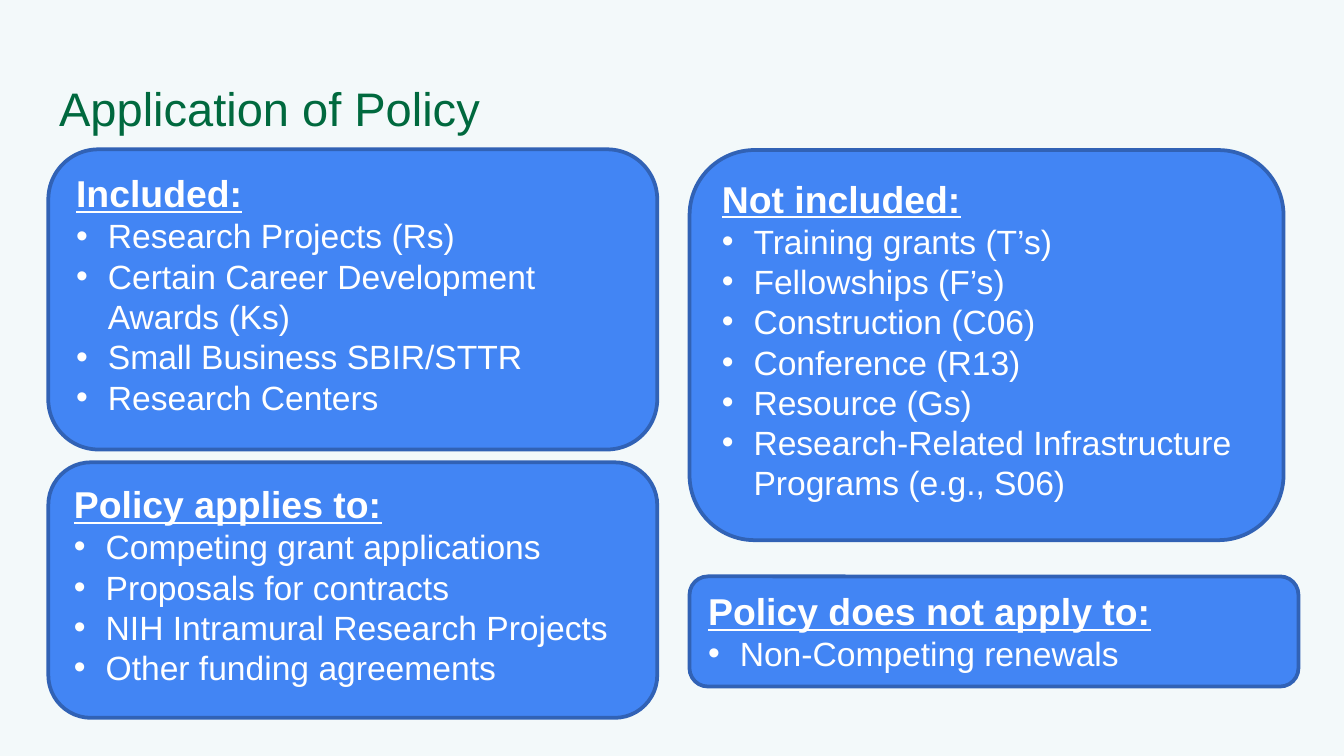
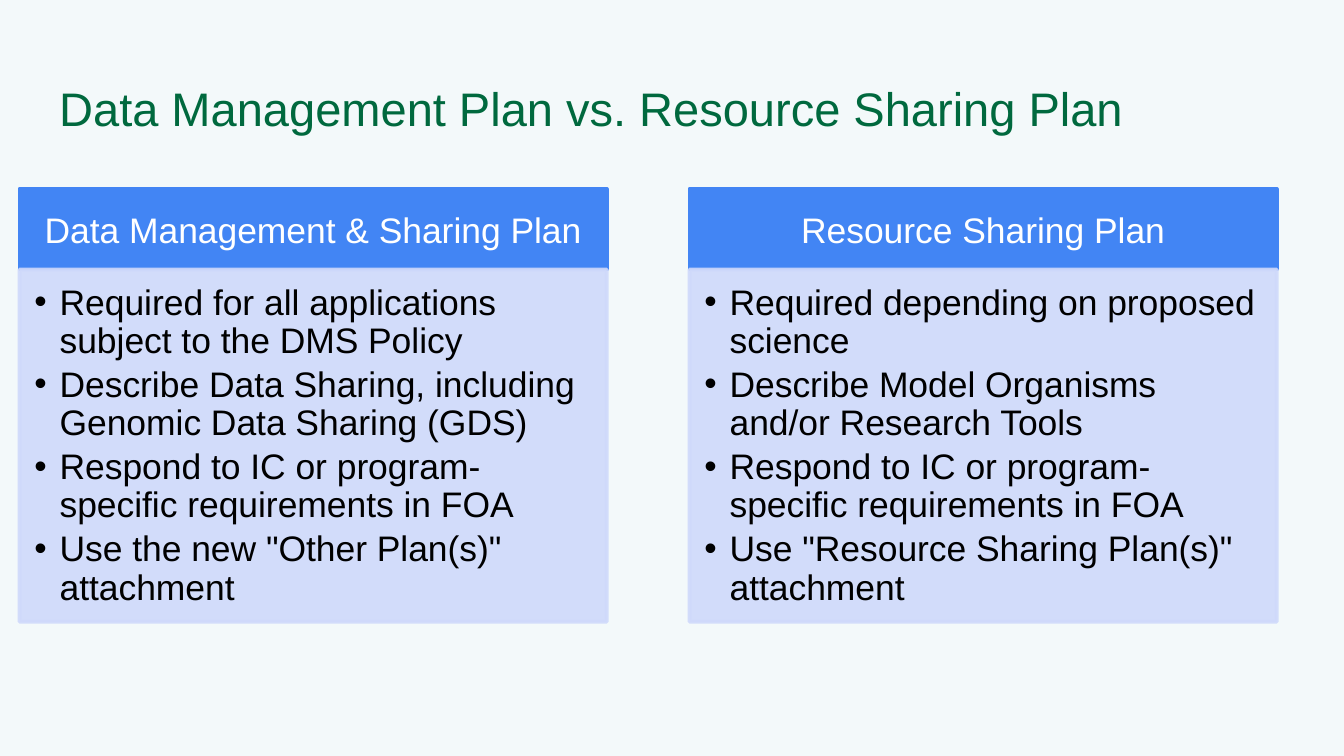
from lxml import etree
from pptx import Presentation
from pptx.dml.color import RGBColor
from pptx.enum.shapes import MSO_SHAPE
from pptx.enum.text import MSO_ANCHOR, MSO_AUTO_SIZE, PP_ALIGN
from pptx.oxml.ns import qn
from pptx.util import Pt

RECT = MSO_SHAPE.RECTANGLE
CARD = MSO_SHAPE.FLOWCHART_ALTERNATE_PROCESS
TOP, MIDDLE = MSO_ANCHOR.TOP, MSO_ANCHOR.MIDDLE
LEFT, CENTER = PP_ALIGN.LEFT, PP_ALIGN.CENTER
NO_AUTOFIT = MSO_AUTO_SIZE.NONE

FONT = "Arial"
COLORS = {
    "background": "F3F9FA",
    "title": "00693E",
    "blue": "4285F4",
    "card_line": "3162B5",
    "pale": "CFD9FB",
    "white": "FFFFFF",
    "black": "000000",
}
TITLE_BOX = (24.5, 35.3, 671, 45.4)
CARD_INSETS = (7.2, 3.6, 7.2, 3.6)
HEADER_INSETS = (10.8, 5.8, 10.8, 5.8)
BODY_INSETS = (8, 8, 10.8, 12)
HEADER_HEIGHT = 43.2

LEFT_X, RIGHT_X, CARD_WIDTH = 25.9, 369.4, 326.2
POLICY_CARDS = [
    ((LEFT_X, 80, CARD_WIDTH, 160.8), "Included:", [
        "Research Projects (Rs)",
        "Certain Career Development Awards (Ks)",
        "Small Business SBIR/STTR",
        "Research Centers",
    ]),
    ((RIGHT_X, 80.4, 318.2, 209), "Not included:", [
        "Training grants (T’s)",
        "Fellowships (F’s)",
        "Construction (C06)",
        "Conference (R13)",
        "Resource (Gs)",
        "Research-Related Infrastructure Programs (e.g., S06)",
    ]),
    ((LEFT_X, 247.7, CARD_WIDTH, 136.9), "Policy applies to:", [
        "Competing grant applications",
        "Proposals for contracts",
        "NIH Intramural Research Projects",
        "Other funding agreements",
    ]),
    ((RIGHT_X, 308.8, CARD_WIDTH, 59), "Policy does not apply to:", [
        "Non-Competing renewals",
    ]),
]

PLAN_TOP, PLAN_WIDTH, PLAN_HEIGHT = 101.2, 314.6, 232
PLANS = [
    (10.5, "Data Management & Sharing Plan", [
        "Required for all applications subject to the DMS Policy",
        "Describe Data Sharing, including Genomic Data Sharing (GDS)",
        "Respond to IC or program-specific requirements in FOA",
        'Use the new "Other Plan(s)" attachment',
    ]),
    (RIGHT_X, "Resource Sharing Plan", [
        "Required depending on proposed science",
        "Describe Model Organisms and/or Research Tools",
        "Respond to IC or program-specific requirements in FOA",
        'Use "Resource Sharing Plan(s)" attachment',
    ]),
]


def rgb(name):
    return RGBColor.from_string(COLORS[name])


def set_frame(tf, insets, anchor):
    tf.word_wrap = True
    tf.auto_size = NO_AUTOFIT
    tf.vertical_anchor = anchor
    tf.margin_left, tf.margin_top, tf.margin_right, tf.margin_bottom = map(Pt, insets)


def add_box(s, kind, box, fill, line, insets, anchor):
    sp = s.shapes.add_shape(kind, *map(Pt, box))
    sp.shadow.inherit = False
    sp.fill.solid()
    sp.fill.fore_color.rgb = rgb(fill)
    sp.line.color.rgb = rgb(line)
    sp.line.width = Pt(2)
    set_frame(sp.text_frame, insets, anchor)
    return sp


def set_alpha(sp, percent):
    """Make the fill and the line of a shape partly transparent."""
    for clr in sp._element.spPr.iter(qn("a:srgbClr")):
        etree.SubElement(clr, qn("a:alpha"), val=str(percent * 1000))


def write(p, text, size, color, align=LEFT):
    p.alignment = align
    r = p.add_run()
    r.text = text
    r.font.name = FONT
    r.font.size = Pt(size)
    r.font.color.rgb = rgb(color)
    return r


def add_bullet(p, indent):
    pPr = p._p.get_or_add_pPr()
    pPr.set("marL", str(Pt(indent)))
    pPr.set("indent", str(-Pt(indent)))
    etree.SubElement(pPr, qn("a:buFont"), typeface=FONT)
    etree.SubElement(pPr, qn("a:buChar"), char="•")


def add_titled_slide(prs, title):
    s = prs.slides.add_slide(prs.slide_layouts.get_by_name("Title Only"))
    sp = s.shapes.title
    sp.left, sp.top, sp.width, sp.height = map(Pt, TITLE_BOX)
    set_frame(sp.text_frame, (7.2,) * 4, TOP)
    write(sp.text_frame.paragraphs[0], title, 25.2, "title")
    return s


def add_policy_card(s, box, heading, items):
    tf = add_box(s, CARD, box, "blue", "card_line", CARD_INSETS, TOP).text_frame
    r = write(tf.paragraphs[0], heading, 20, "white")
    r.font.bold = True
    r.font.underline = True
    for item in items:
        p = tf.add_paragraph()
        write(p, item, 18, "white")
        add_bullet(p, 17)


def add_plan(s, box, heading, items):
    """Stack a heading band on a bulleted panel inside the box."""
    x, y, w, h = box
    header = add_box(s, RECT, (x, y, w, HEADER_HEIGHT), "blue", "blue",
                     HEADER_INSETS, MIDDLE)
    write(header.text_frame.paragraphs[0], heading, 19, "white", CENTER)

    body = add_box(s, RECT, (x, y + HEADER_HEIGHT, w, h - HEADER_HEIGHT),
                   "pale", "pale", BODY_INSETS, TOP)
    set_alpha(body, 90)
    tf = body.text_frame
    for i, item in enumerate(items):
        p = tf.add_paragraph() if i else tf.paragraphs[0]
        p.line_spacing = 0.9
        p.space_after = Pt(3)
        write(p, item, 19, "black")
        add_bullet(p, 13.5)


def main():
    prs = Presentation()
    prs.slide_width, prs.slide_height = Pt(720), Pt(405)
    background = prs.slide_master.background.fill
    background.solid()
    background.fore_color.rgb = rgb("background")

    s = add_titled_slide(prs, "Application of Policy")
    for box, heading, items in POLICY_CARDS:
        add_policy_card(s, box, heading, items)

    s = add_titled_slide(prs, "Data Management Plan vs. Resource Sharing Plan")
    for x, heading, items in PLANS:
        add_plan(s, (x, PLAN_TOP, PLAN_WIDTH, PLAN_HEIGHT), heading, items)

    prs.save("out.pptx")


if __name__ == "__main__":
    main()
